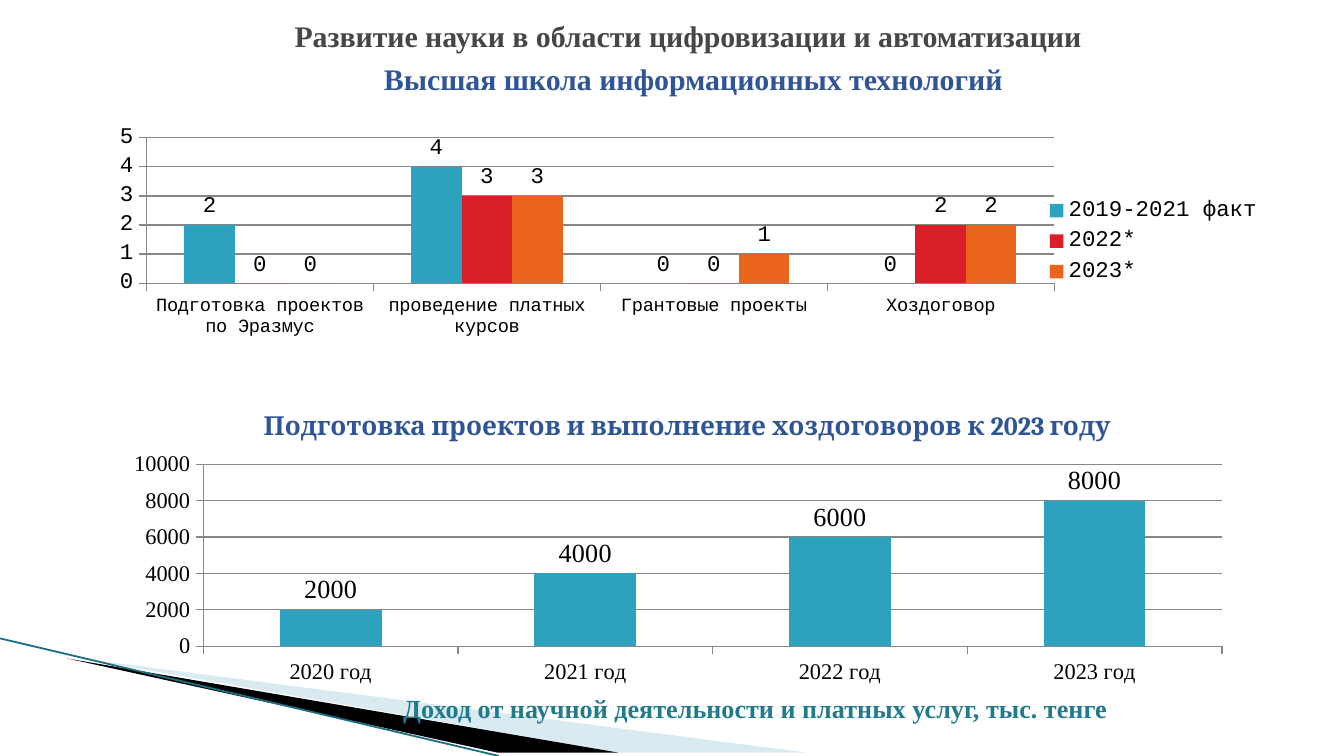
from lxml import etree
from pptx import Presentation
from pptx import util as u
from pptx.chart.data import CategoryChartData
from pptx.dml.color import RGBColor
from pptx.enum import chart as charts, shapes, text
from pptx.oxml.ns import qn

COLUMNS, ROWS = 100, 56.25
CELL = u.Inches(0.1)

BLACK = RGBColor(0x00, 0x00, 0x00)
GRAY = RGBColor(0x46, 0x46, 0x46)
AXIS_GRAY = RGBColor(0x87, 0x87, 0x87)
BLUE = RGBColor(0x2F, 0x55, 0x97)
DARK_TEAL = RGBColor(0x22, 0x7A, 0x8F)
EDGE_TEAL = RGBColor(0x1C, 0x6E, 0x84)
PALE_BLUE = RGBColor(0xA0, 0xCB, 0xDC)
TEAL = RGBColor(0x2D, 0xA2, 0xBF)
RED = RGBColor(0xDA, 0x1F, 0x28)
ORANGE = RGBColor(0xEB, 0x64, 0x1B)

SERIF = "Times New Roman"
MONO = "Courier New"


def grid(*cells):
    return [u.Emu(round(cell * CELL)) for cell in cells]


def set_font(font, color=BLACK, **values):
    for name, value in values.items():
        setattr(font, name, u.Pt(value) if name == "size" else value)
    font.color.rgb = color


def add_heading(slide, place, wording, color, size=16, name=SERIF, indent=1):
    shape = slide.shapes.add_textbox(*grid(*place))
    frame = shape.text_frame
    frame.word_wrap = True
    frame.margin_left = grid(indent)[0]
    paragraph = frame.paragraphs[0]
    paragraph.alignment = text.PP_ALIGN.CENTER
    run = paragraph.add_run()
    run.text = wording
    set_font(run.font, color, size=size, name=name, bold=True)


def add_wedge(slide, points, color, opacity=100):
    builder = slide.shapes.build_freeform(*points[0], scale=CELL)
    builder.add_line_segments(points[1:], close=True)
    shape = builder.convert_to_shape()
    shape.shadow.inherit = False
    shape.line.fill.background()
    shape.fill.solid()
    shape.fill.fore_color.rgb = color
    if opacity < 100:
        solid = shape.fill._xPr.find(qn("a:solidFill"))
        etree.SubElement(solid[0], qn("a:alpha"), val=str(opacity * 1000))


def add_edge(slide, start, end):
    connector = slide.shapes.add_connector(
        shapes.MSO_CONNECTOR.STRAIGHT, *grid(*start, *end))
    connector.line.color.rgb = EDGE_TEAL
    connector.line.width = u.Pt(0.95)
    etree.SubElement(connector._element.spPr, qn("a:effectLst"))


def style_axis(axis, size, name):
    axis.major_tick_mark = charts.XL_TICK_MARK.OUTSIDE
    axis.minor_tick_mark = charts.XL_TICK_MARK.NONE
    axis.format.line.color.rgb = AXIS_GRAY
    set_font(axis.tick_labels.font, size=size, name=name)


def add_columns(slide, place, categories, series, name, label_size,
                category_size, top, step):
    data = CategoryChartData()
    data.categories = categories
    for title, values, _ in series:
        data.add_series(title, values)
    chart = slide.shapes.add_chart(
        charts.XL_CHART_TYPE.COLUMN_CLUSTERED, *grid(*place), data).chart
    chart.has_title = False
    chart.has_legend = False
    set_font(chart.font, size=12, name=name)
    style_axis(chart.category_axis, category_size, name)
    axis = chart.value_axis
    style_axis(axis, 12, name)
    axis.minimum_scale, axis.maximum_scale, axis.major_unit = 0, top, step
    axis.has_major_gridlines = True
    axis.major_gridlines.format.line.color.rgb = AXIS_GRAY
    plot = chart.plots[0]
    plot.gap_width, plot.overlap, plot.vary_by_categories = 150, 0, False
    for column, (_, _, color) in zip(plot.series, series):
        column.format.fill.solid()
        column.format.fill.fore_color.rgb = color
        labels = column.data_labels
        labels.show_value = True
        labels.position = charts.XL_LABEL_POSITION.OUTSIDE_END
        set_font(labels.font, size=label_size, name=name)
    return chart


def add_legend(chart):
    chart.has_legend = True
    chart.legend.position = charts.XL_LEGEND_POSITION.RIGHT
    chart.legend.include_in_layout = False
    set_font(chart.legend.font, size=12, name=MONO)


def set_plot_area(chart, **shares):
    area = chart._chartSpace.find(".//" + qn("c:plotArea"))
    for old in area.findall(qn("c:layout")):
        area.remove(old)
    layout = etree.Element(qn("c:layout"))
    manual = etree.SubElement(layout, qn("c:manualLayout"))
    values = {"layoutTarget": "inner", "xMode": "edge", "yMode": "edge"}
    for tag, value in {**values, **shares}.items():
        etree.SubElement(manual, qn("c:" + tag), val=str(value))
    area.insert(0, layout)


def main():
    presentation = Presentation()
    presentation.slide_width, presentation.slide_height = grid(COLUMNS, ROWS)
    slide = presentation.slides.add_slide(presentation.slide_layouts[6])

    add_wedge(slide, [(5.5, 48.8), (59.5, ROWS), (45.6, ROWS)], PALE_BLUE, 40)
    add_wedge(slide, [(5.3, 48.7), (45.7, ROWS), (37.2, ROWS)], BLACK)
    add_edge(slide, (0, 47.5), (37.1, ROWS))

    add_heading(slide, (8.3, 0.8, 85.8, 3.7),
                "Развитие науки в области цифровизации и автоматизации", GRAY)
    add_heading(slide, (14.6, 4, 74, 3.7),
                "Высшая школа информационных технологий", BLUE)
    add_heading(slide, (2.6, 51, 94.5, 3.4),
                "Доход от научной деятельности и платных услуг, тыс. тенге",
                DARK_TEAL, size=14, indent=13.7)
    add_heading(slide, (11.8, 30, 78.7, 3.4),
                "Подготовка проектов и выполнение хоздоговоров к 2023 году",
                BLUE, size=14, name="Cambria")

    add_columns(
        slide, (8.3, 33.3, 84.3, 17.9),
        ["2020 год", "2021 год", "2022 год", "2023 год"],
        [("Series 1", (2000, 4000, 6000, 8000), TEAL)],
        SERIF, label_size=14, category_size=12, top=10000, step=2000)
    projects = add_columns(
        slide, (8.3, 5.9, 86.6, 24.1),
        ["Подготовка проектов по Эразмус", "проведение платных курсов",
         "Грантовые проекты", "Хоздоговор"],
        [("2019-2021 факт", (2, 4, 0, 0), TEAL),
         ("2022*", (0, 3, 0, 2), RED),
         ("2023*", (0, 3, 1, 2), ORANGE)],
        MONO, label_size=12, category_size=10, top=5, step=1)
    add_legend(projects)
    set_plot_area(projects, x=0.03, y=0.18, w=0.78, h=0.45)

    presentation.save("out.pptx")


if __name__ == "__main__":
    main()
